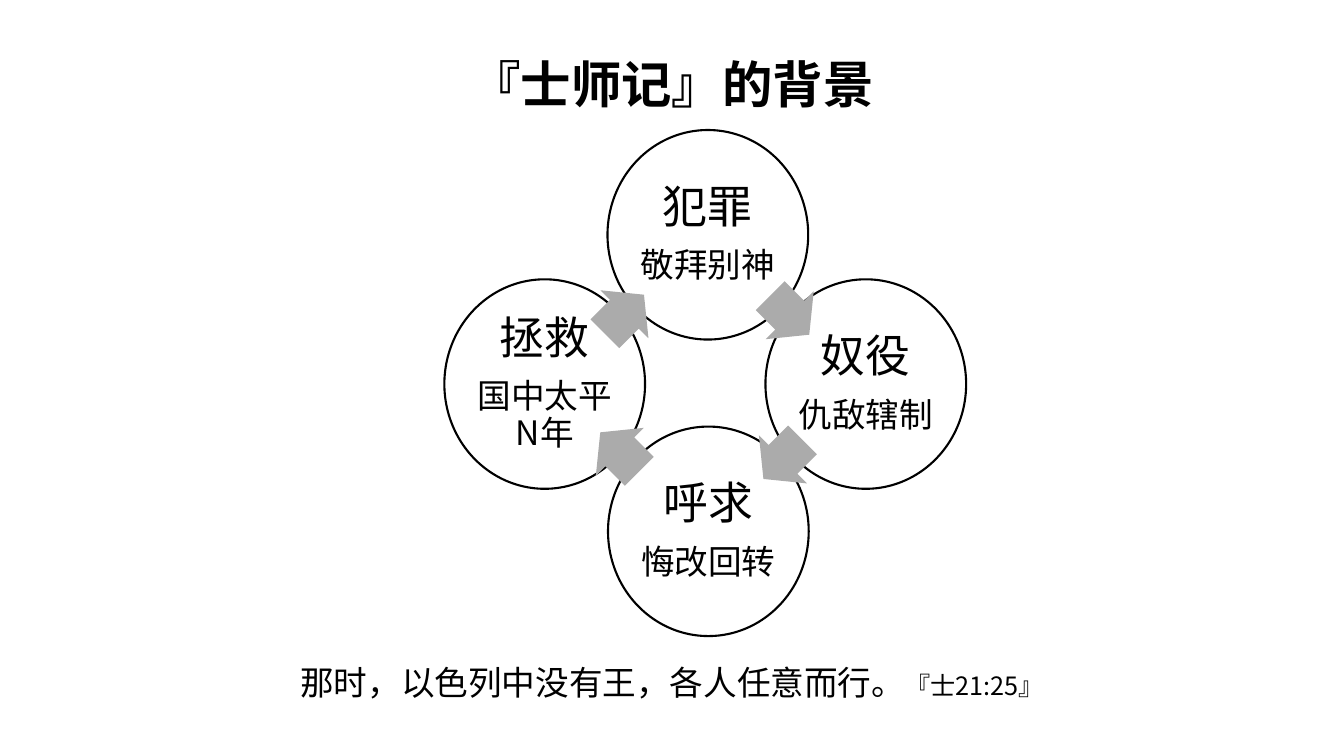
from collections import namedtuple

from lxml import etree
from pptx import Presentation
from pptx.dml.color import RGBColor
from pptx.enum.shapes import MSO_SHAPE
from pptx.enum.text import MSO_ANCHOR, PP_ALIGN
from pptx.oxml.ns import qn
from pptx.util import Inches, Pt

ELLIPSE, RIGHT_ARROW = MSO_SHAPE.OVAL, MSO_SHAPE.RIGHT_ARROW
CENTER = PP_ALIGN.CENTER
TOP, MIDDLE = MSO_ANCHOR.TOP, MSO_ANCHOR.MIDDLE

BLACK = RGBColor(0x00, 0x00, 0x00)
WHITE = RGBColor(0xFF, 0xFF, 0xFF)
GRAY = RGBColor(0xAB, 0xAB, 0xAB)
CHINESE_FONT, LATIN_FONT = "Noto Sans CJK SC", "Calibri"

Box = namedtuple("Box", "left top width height")
SLIDE = Box(0, 0, Inches(13.33), Inches(7.5))
TITLE_BOX = Box(0, Inches(0.48), SLIDE.width, Inches(0.71))
CYCLE_BOX = Box(Inches(4.41), Inches(1.29), Inches(5.17), Inches(5.02))
VERSE_BOX = Box(0, Inches(6.52), SLIDE.width, Inches(0.5))

# Centres and sizes are percentages of the cycle's box.
STAGE_SIZE = (38.5, 41.4)
STAGES = [
    ("犯罪", "敬拜别神", (50.5, 20.7)),
    ("奴役", "仇敌辖制", (80.8, 50.2)),
    ("呼求", "悔改回转", (50.6, 79.3)),
    ("拯救", "国中太平N年", (19.2, 50.2)),
]
ARROW_SIZE = (10.6, 13.4)
ARROWS = [
    (45, (66.2, 36.6)),
    (135, (64.9, 65.1)),
    (225, (33.6, 63.6)),
    (315, (34.5, 36.4)),
]


def add_run(paragraph, text, size, font=CHINESE_FONT, bold=False):
    run = paragraph.add_run()
    run.text = text
    run.font.size = Pt(size)
    run.font.name = font
    run.font.bold = bold
    run.font.color.rgb = BLACK
    latin = run.font._element.find(qn("a:latin"))
    east_asian = etree.Element(qn("a:ea"), typeface=CHINESE_FONT)
    latin.addnext(east_asian)


def set_space_after_percent(paragraph, percent):
    paragraph.space_after = Pt(0)
    spacing = paragraph._p.pPr.find(qn("a:spcAft"))
    spacing.remove(spacing[0])
    etree.SubElement(spacing, qn("a:spcPct"), val=str(percent * 1000))


def add_cycle_shape(slide, box, kind, center, size, color):
    """Add a preset shape whose centre and size are percentages of the box."""
    width, height = (box.width * size[0] / 100, box.height * size[1] / 100)
    left = box.left + box.width * center[0] / 100 - width / 2
    top = box.top + box.height * center[1] / 100 - height / 2
    shape = slide.shapes.add_shape(kind, int(left), int(top), int(width), int(height))
    shape.shadow.inherit = False
    shape.fill.solid()
    shape.fill.fore_color.rgb = color
    return shape


def add_stage(slide, box, heading, detail, center):
    circle = add_cycle_shape(slide, box, ELLIPSE, center, STAGE_SIZE, WHITE)
    circle.line.color.rgb = BLACK
    circle.line.width = Pt(1.5)
    frame = circle.text_frame
    frame.word_wrap = True
    frame.vertical_anchor = MIDDLE
    frame.margin_left = frame.margin_right = Inches(0.03)
    frame.margin_top = frame.margin_bottom = Inches(0.03)
    paragraphs = (frame.paragraphs[0], frame.add_paragraph())
    for paragraph, text, size in zip(paragraphs, (heading, detail), (32, 24)):
        paragraph.alignment = CENTER
        paragraph.line_spacing = 0.9
        set_space_after_percent(paragraph, 35)
        add_run(paragraph, text, size)


def add_cycle(slide, box):
    for heading, detail, center in STAGES:
        add_stage(slide, box, heading, detail, center)
    for rotation, center in ARROWS:
        arrow = add_cycle_shape(slide, box, RIGHT_ARROW, center, ARROW_SIZE, GRAY)
        arrow.line.fill.background()
        arrow.adjustments[0] = 0.6
        arrow.adjustments[1] = 0.5
        arrow.rotation = rotation


def fill_title(slide, box):
    title = slide.shapes.title
    title.left, title.top, title.width, title.height = box
    title.text_frame.vertical_anchor = TOP
    paragraph = title.text_frame.paragraphs[0]
    paragraph.alignment = CENTER
    add_run(paragraph, "『士师记』的背景", 36, bold=True)


def add_verse(slide, box):
    frame = slide.shapes.add_textbox(*box).text_frame
    frame.word_wrap = True
    paragraph = frame.paragraphs[0]
    paragraph.alignment = CENTER
    add_run(paragraph, "那时，以色列中没有王，各人任意而行。", 24, LATIN_FONT)
    add_run(paragraph, "『士", 18, LATIN_FONT)
    add_run(paragraph, "21:25』", 18)


def main():
    presentation = Presentation()
    presentation.slide_width, presentation.slide_height = SLIDE.width, SLIDE.height
    title_only = presentation.slide_layouts[5]
    slide = presentation.slides.add_slide(title_only)
    fill_title(slide, TITLE_BOX)
    add_cycle(slide, CYCLE_BOX)
    add_verse(slide, VERSE_BOX)
    presentation.save("out.pptx")


if __name__ == "__main__":
    main()
